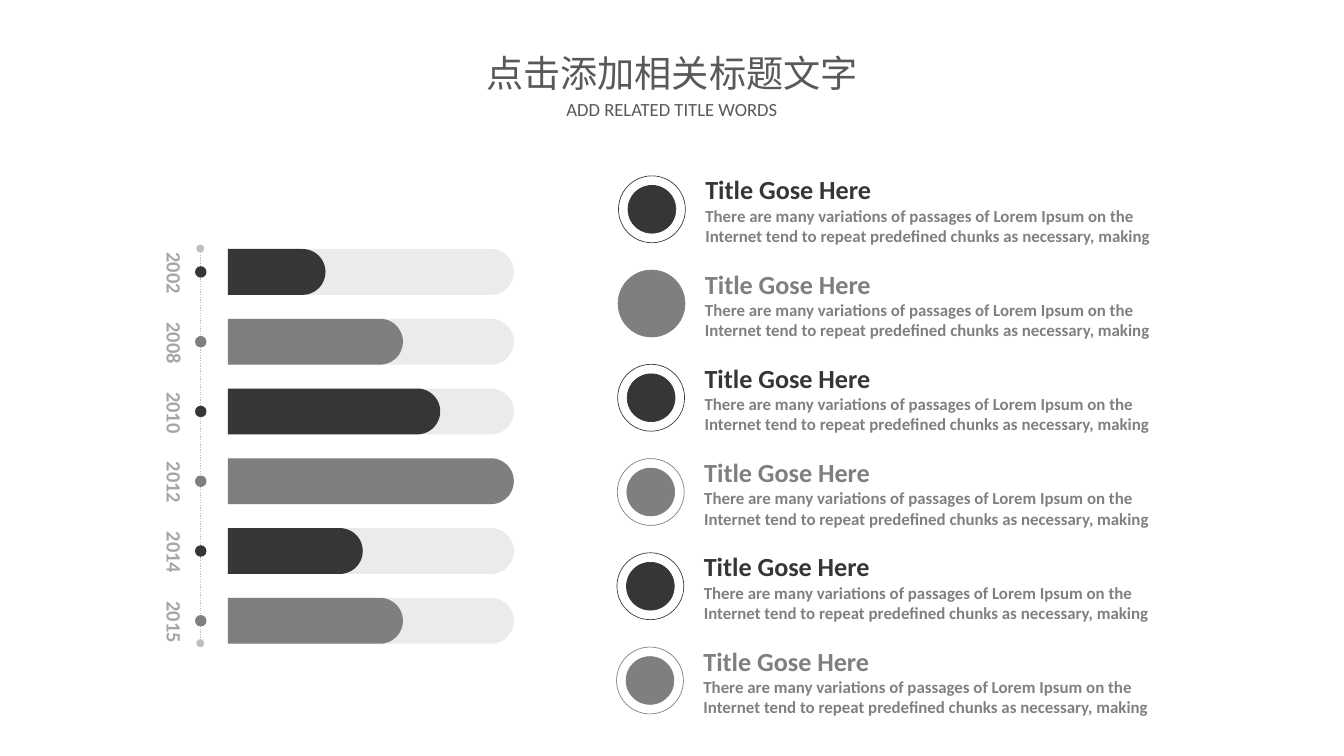
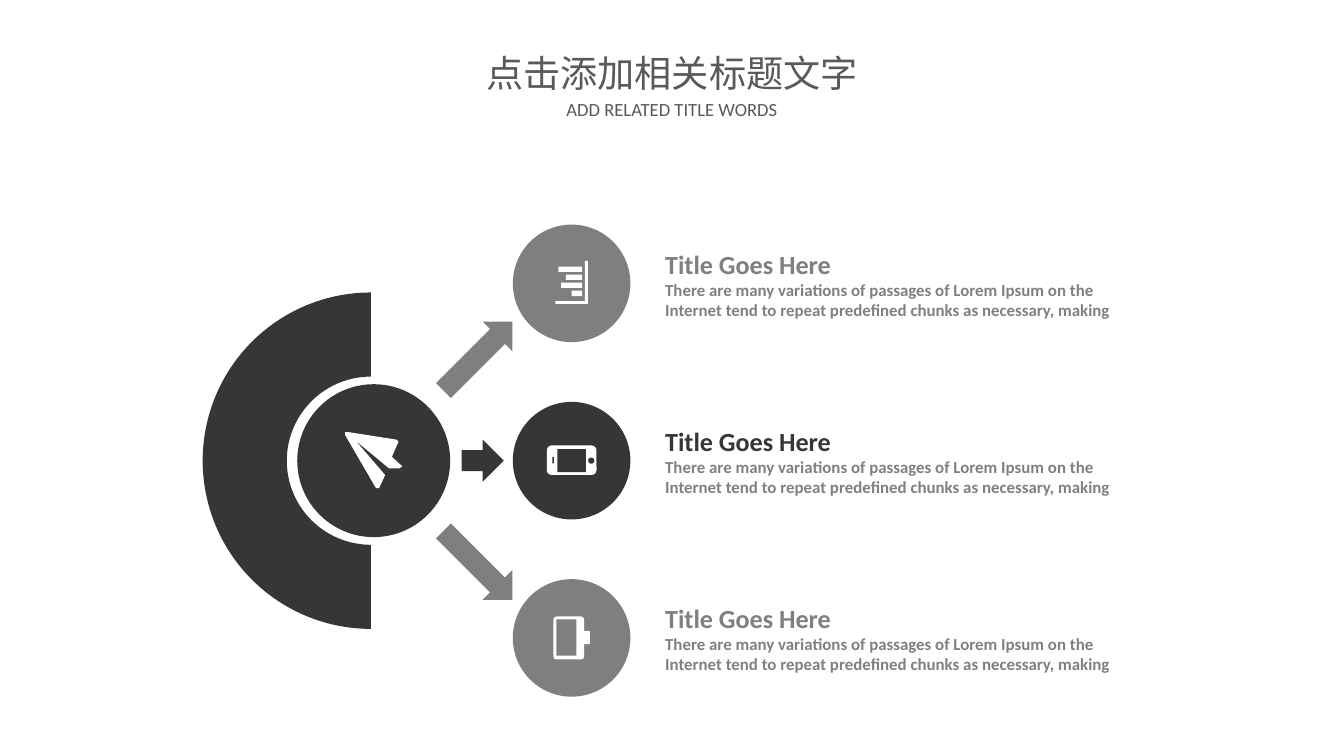
from lxml.etree import SubElement
from pptx import Presentation
from pptx.dml.color import RGBColor
from pptx.enum.dml import MSO_LINE
from pptx.enum.shapes import MSO_CONNECTOR, MSO_SHAPE
from pptx.enum.text import MSO_ANCHOR, MSO_AUTO_SIZE, PP_ALIGN
from pptx.oxml.ns import qn
from pptx.util import Inches, Pt

OVAL = MSO_SHAPE.OVAL
RECT = MSO_SHAPE.RECTANGLE
ROUND = MSO_SHAPE.ROUNDED_RECTANGLE
TAB = MSO_SHAPE.ROUND_2_SAME_RECTANGLE
ARROW = MSO_SHAPE.DOWN_ARROW
ARC = MSO_SHAPE.BLOCK_ARC
LINE = MSO_CONNECTOR.STRAIGHT
DOTS = MSO_LINE.ROUND_DOT
TOP, BOTTOM = MSO_ANCHOR.TOP, MSO_ANCHOR.BOTTOM
CENTER, LEFT = PP_ALIGN.CENTER, PP_ALIGN.LEFT
FIXED = MSO_AUTO_SIZE.NONE

COLS, ROWS = 140.6, 79.1
CELL = Inches(0.1)
FONT = "Calibri"
DARK, GRAY, WHITE = "363636", "7F7F7F", "FFFFFF"
PALE, AXIS, YEAR = "EBEBEB", "BFBFBF", "A6A6A6"
HEAD, BODY = "595959", "808080"

TITLE = "点击添加相关标题文字"
SUB = "ADD RELATED TITLE WORDS"
LOREM = ("There are many variations of passages of Lorem Ipsum on the "
         "Internet tend to repeat predefined chunks as necessary, making")


def grid(n):
    return round(n * CELL)


def ink(code):
    return RGBColor.from_string(code)


class Deck:
    def __init__(self):
        self.prs = Presentation()
        self.prs.slide_width = grid(COLS)
        self.prs.slide_height = grid(ROWS)
        self.slide = None

    def page(self):
        self.slide = self.prs.slides.add_slide(self.prs.slide_layouts[0])
        title, sub = self.slide.placeholders
        self.head(title, TITLE, 4.8, 5.8, 28)
        self.head(sub, SUB, 9.7, 3.4, 14)

    def head(self, box, text, y, h, size):
        wide = 41.4
        box.left, box.top = grid((COLS - wide) / 2), grid(y)
        box.width, box.height = grid(wide), grid(h)
        frame = box.text_frame
        frame.text = text
        frame.word_wrap = False
        frame.auto_size = FIXED
        frame.vertical_anchor = TOP
        self.style(frame.paragraphs[0], size, HEAD, False, CENTER)

    def style(self, para, size, color, bold=True, align=LEFT):
        para.alignment = align
        para.space_before = Pt(0)
        for run in para.runs:
            run.font.name = FONT
            run.font.size = Pt(size)
            run.font.bold = bold
            run.font.color.rgb = ink(color)

    def paint(self, shape, fill, edge=None):
        shape.shadow.inherit = False
        shape.fill.solid()
        shape.fill.fore_color.rgb = ink(fill)
        if edge:
            shape.line.color.rgb = ink(edge)
            shape.line.width = Pt(0.5)
        else:
            shape.line.fill.background()
        return shape

    def shape(self, kind, x, y, w, h, fill, edge=None, turn=0):
        item = self.slide.shapes.add_shape(
            kind, grid(x), grid(y), grid(w), grid(h))
        item.rotation = turn
        return self.paint(item, fill, edge)

    def mid(self, kind, x, y, w, h, fill, edge=None, turn=0):
        return self.shape(kind, x - w / 2, y - h / 2, w, h, fill, edge, turn)

    def disc(self, x, y, size, fill, edge=None):
        return self.mid(OVAL, x, y, size, size, fill, edge)

    def bar(self, x, y, size, fill):
        tab = self.mid(TAB, x + size / 2, y, 4.8, size, fill, turn=90)
        tab.adjustments[0] = 0.5
        tab.adjustments[1] = 0

    def label(self, x, y, text):
        w, h = 6.4, 2.6
        box = self.slide.shapes.add_textbox(
            grid(x - w / 2), grid(y - h / 2), grid(w), grid(h))
        box.rotation = 90
        frame = box.text_frame
        frame.text = text
        frame.word_wrap = True
        frame.vertical_anchor = BOTTOM
        frame.margin_left = frame.margin_right = 0
        frame.margin_top = frame.margin_bottom = 0
        self.style(frame.paragraphs[0], 15.4, YEAR, align=CENTER)

    def note(self, x, y, title, color):
        box = self.slide.shapes.add_textbox(
            grid(x), grid(y - 4.2), grid(50.8), grid(8.6))
        frame = box.text_frame
        frame.word_wrap = True
        frame.text = title + "\n" + LOREM
        first, second = frame.paragraphs
        self.style(first, 19.7, color)
        self.style(second, 12.7, BODY)

    def axis(self, x, top, end):
        line = self.slide.shapes.add_connector(
            LINE, grid(x), grid(top), grid(x), grid(end))
        line.line.color.rgb = ink(AXIS)
        line.line.width = Pt(1)
        line.line.dash_style = DOTS
        props = line._element.spPr
        edge = props.find(qn("a:ln"))
        for tag in ("a:headEnd", "a:tailEnd"):
            SubElement(edge, qn(tag), type="oval")
        SubElement(props, qn("a:effectLst"))

    def free(self, points, fill):
        spots = [(grid(x), grid(y)) for x, y in points]
        pen = self.slide.shapes.build_freeform(*spots[0])
        pen.add_line_segments(spots[1:], close=True)
        self.paint(pen.convert_to_shape(), fill)


def years(deck):
    deck.page()
    deck.axis(20.95, 26, 67.3)
    full = 29.9
    rows = [("2002", 10.2), ("2008", 18.3), ("2010", 22.2),
            ("2012", full), ("2014", 14.1), ("2015", 18.3)]
    for i, (year, size) in enumerate(rows):
        color = (DARK, GRAY)[i % 2]
        y = 28.45 + 7.3 * i
        deck.disc(21, y, 1.2, color)
        deck.label(18.3, y + 0.15, year)
        deck.bar(23.85, y, full, PALE)
        deck.bar(23.85, y, size, color)

        shift = 0.04 * i
        y = 21.9 + 9.86 * i
        deck.note(72.8 - shift, y, "Title Gose Here", color)
        deck.disc(68.2 - shift, y, 7, GRAY if i == 1 else WHITE, color)
        deck.disc(68.2 - shift, y, 5, color, color)


def chart(deck):
    deck.shape(RECT, 61.2, 27.3, 0.3, 4.5, WHITE)
    deck.shape(RECT, 58.1, 31.5, 3.4, 0.3, WHITE)
    for i, size in enumerate((2.5, 1.7, 2.2, 1.1)):
        deck.shape(RECT, 60.9 - size, 27.9 + 0.84 * i, size, 0.56, WHITE)


def phone(deck):
    deck.shape(ROUND, 57.2, 46.6, 5.2, 3.1, WHITE)
    deck.shape(RECT, 58.3, 47, 3, 2.4, DARK)
    deck.shape(RECT, 57.8, 47.8, 0.15, 0.7, DARK)
    deck.disc(61.85, 48.2, 0.65, DARK)


def power(deck):
    deck.shape(ROUND, 57.9, 64.5, 3.2, 4.5, WHITE).adjustments[0] = 0.1
    deck.shape(ROUND, 60.9, 66, 0.8, 1.4, WHITE).adjustments[0] = 0.1
    deck.shape(RECT, 58.2, 64.8, 2.1, 3.8, GRAY)


def plane(deck):
    deck.free([(36.4, 45.2), (41.5, 46), (41.7, 46.2), (41, 47.8),
               (42.1, 48.8), (41.8, 49), (40.7, 49), (37.2, 46.1),
               (40.3, 49.7), (39.7, 51), (39.5, 51.1), (39.3, 51),
               (36.1, 45.5), (36.1, 45.2)], WHITE)


def paths(deck):
    deck.page()
    hub = 48.2
    deck.mid(ARC, 38.8, hub, 35.2, 35.2, DARK, turn=270)
    deck.disc(39.1, hub, 16, DARK)
    plane(deck)
    for i, icon in zip((-1, 0, 1), (chart, phone, power)):
        color = GRAY if i else DARK
        y = hub + 18.55 * i
        deck.mid(ARROW, 50 if i else 50.5, hub + 10.95 * i,
                 4.4, 10.2 if i else 4.4, color, turn=270 + 45 * i)
        deck.disc(59.8, y, 12.3, color)
        icon(deck)
        deck.note(68.6, y, "Title Goes Here", color)


def main():
    deck = Deck()
    years(deck)
    paths(deck)
    deck.prs.save("out.pptx")


if __name__ == "__main__":
    main()
